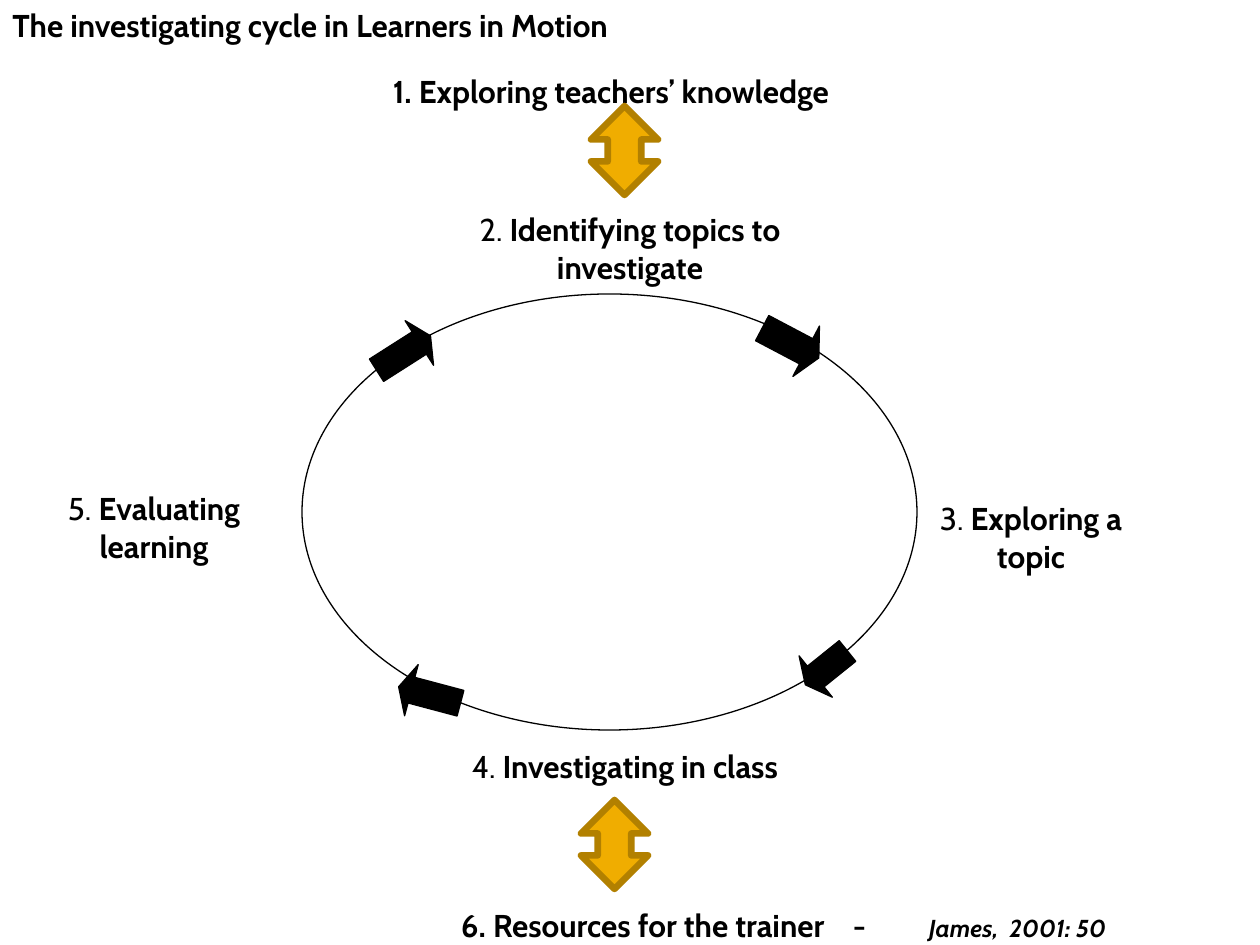
import pptx
import pptx.util
from lxml import etree
from pptx.dml.color import RGBColor
from pptx.enum.shapes import MSO_SHAPE
from pptx.enum.text import MSO_AUTO_SIZE, PP_ALIGN
from pptx.oxml.ns import qn

PX = 914400 // 126
BLACK = RGBColor(0x00, 0x00, 0x00)
WHITE = RGBColor(0xFF, 0xFF, 0xFF)
GOLD = RGBColor(0xF0, 0xAD, 0x00)
DARK_GOLD = RGBColor(0xB2, 0x80, 0x00)

prs = pptx.Presentation()
prs.slide_width = 1260 * PX
prs.slide_height = 945 * PX
s = prs.slides.add_slide(prs.slide_layouts[6])


def add_shape(kind, box, fill, line, width, rotation=0):
    sp = s.shapes.add_shape(kind, *(v * PX for v in box))
    sp.shadow.inherit = False
    sp.fill.solid()
    sp.fill.fore_color.rgb = fill
    sp.line.color.rgb = line
    sp.line.width = pptx.util.Pt(width)
    sp.rotation = rotation
    return sp


def add_label(box, number, title, align=PP_ALIGN.CENTER):
    """Add a text box with a plain number before a bold title."""
    sp = s.shapes.add_textbox(*(v * PX for v in box))
    tf = sp.text_frame
    tf.word_wrap = True
    tf.auto_size = MSO_AUTO_SIZE.SHAPE_TO_FIT_TEXT
    p = tf.paragraphs[0]
    p.alignment = align
    p.font.name = "Cabin"
    p.font.size = pptx.util.Pt(18)
    p.font.color.rgb = BLACK
    for text, bold in ((number, False), (title, True)):
        if text:
            r = p.add_run()
            r.text = text
            r.font.bold = bold
    return tf


# Cycle with its direction arrows
add_shape(MSO_SHAPE.OVAL, (302, 294, 615, 436), WHITE, BLACK, 0.75)
for box, rotation in (
    ((762, 311, 57, 64), 297.8),
    ((800, 641, 53, 54), 51.2),
    ((403, 663, 53, 64), 104.9),
    ((377, 321, 53, 64), 237.5),
):
    sp = add_shape(MSO_SHAPE.DOWN_ARROW, box, BLACK, BLACK, 0.75, rotation)
    sp.adjustments[0] = 0.5
    sp.adjustments[1] = 0.25

# Steps
for box, number, title in (
    ((333, 66, 556, 50), "", "1. Exploring teachers’ knowledge"),
    ((392, 204, 476, 89), "2. ", "Identifying topics to investigate"),
    ((917, 493, 228, 89), "3. ", "Exploring a topic"),
    ((382, 741, 486, 50), "4. ", "Investigating in class"),
    ((35, 483, 238, 89), "5. ", "Evaluating learning"),
):
    add_label(box, number, title)

# Two-way links to the steps outside the cycle
for left, top in ((591, 106), (581, 800)):
    add_shape(MSO_SHAPE.UP_DOWN_ARROW, (left, top, 67, 89), GOLD, DARK_GOLD, 3.78)

# Resources line with its citation, spaced by tab stops
tf = add_label((392, 900, 784, 50), "", "6. Resources for the trainer\t-\t", PP_ALIGN.LEFT)
tf.margin_left = 69 * PX
p = tf.paragraphs[0]
r = p.add_run()
r.text = "James,  2001: 50"
r.font.size = pptx.util.Pt(14)
r.font.bold = True
r.font.italic = True
tabs = etree.Element(qn("a:tabLst"))
for pos in (392, 468):
    etree.SubElement(tabs, qn("a:tab"), pos=str(pos * PX), algn="l")
p._p.get_or_add_pPr().insert(0, tabs)

add_label((0, 0, 1206, 50), "", "The investigating cycle in Learners in Motion", PP_ALIGN.LEFT)

prs.save("out.pptx")
